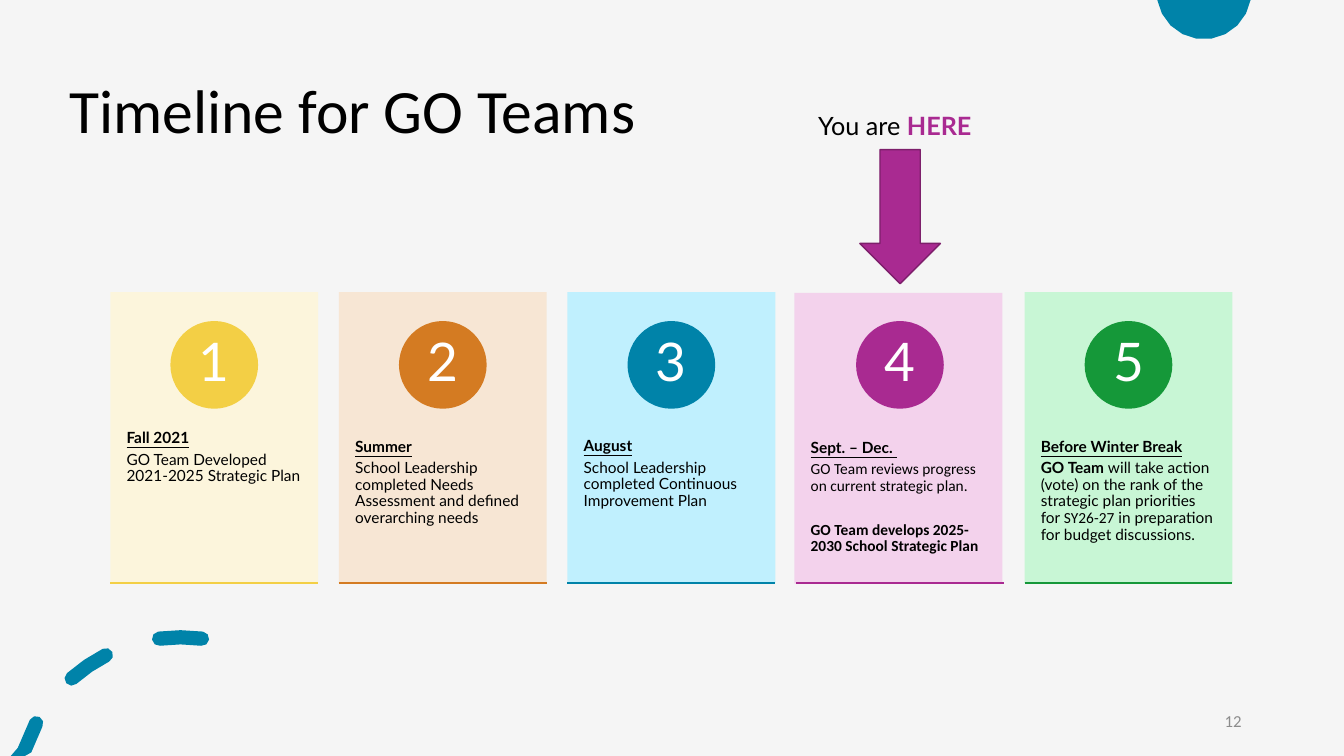
from math import cos, radians, sin

from lxml.etree import SubElement
from pptx import Presentation
from pptx.dml.color import RGBColor
from pptx.enum.shapes import MSO_CONNECTOR, MSO_SHAPE
from pptx.enum.text import MSO_ANCHOR, PP_ALIGN
from pptx.oxml.ns import qn
from pptx.util import Cm, Pt

THEME = {
    "back": "F5F5F5", "ink": "000000", "white": "FFFFFF", "grey": "8C8C8C",
    "teal": "0083A9", "plum": "A92A91", "plum_edge": "7D1F6B",
    "title": 44, "number": 38, "label": 18, "page": 12, "body": 11,
    "head_font": "Calibri", "body_font": "Lato",
}
LATO, CALIBRI = THEME["body_font"], THEME["head_font"]


def add_run(p, text, size, color, font=LATO, bold=False, underline=False):
    r = p.add_run()
    r.text = text
    r.font.name, r.font.size = font, Pt(THEME[size])
    r.font.bold, r.font.underline = bold, underline
    r.font.color.rgb = RGBColor.from_string(THEME[color])


def paint(sp, fill, line=None):
    sp.shadow.inherit = False
    sp.fill.solid()
    sp.fill.fore_color.rgb = RGBColor.from_string(fill)
    if line:
        sp.line.color.rgb = RGBColor.from_string(line)
        sp.line.width = Pt(1)
    else:
        sp.line.fill.background()


prs = Presentation()
prs.slide_width, prs.slide_height = Cm(33.87), Cm(19.05)
s = prs.slides.add_slide(prs.slide_layouts[5])
s.background.fill.solid()
s.background.fill.fore_color.rgb = RGBColor.from_string(THEME["back"])

# Corner decorations: a cut disc and three round-ended dashes on one ring
disc = [(30.34 - 1.19 * sin(radians(t)), max(0, -0.2 - 1.19 * cos(radians(t))))
        for t in range(99, 262, 18)]
dashes = []
ring_x, ring_y, ring_r, half = 4.55, 20.2, 4.14, 0.18
for start, end in ((61.5, 82), (27, 41.5), (-7.5, 7.5)):
    middle = (start + end) / 2
    sweep = [(t, t) for t in (start, middle, end)]
    sweep += [(end, end + turn) for turn in (45, 90, 135)]
    sweep += [(t, t + 180) for t in (end, middle, start)]
    sweep += [(start, start + turn) for turn in (225, 270, 315)]
    dashes.append([
        (ring_x - ring_r * sin(radians(t)) - half * sin(radians(a)),
         min(19.05, ring_y - ring_r * cos(radians(t)) - half * cos(radians(a))))
        for t, a in sweep])
for outlines in ([disc], dashes):
    contours = [[(Cm(x), Cm(y)) for x, y in outline] for outline in outlines]
    builder = s.shapes.build_freeform(*contours[0][0])
    for contour in contours:
        if contour is not contours[0]:
            builder.move_to(*contour[0])
        builder.add_line_segments(contour[1:], close=True)
    paint(builder.convert_to_shape(), THEME["teal"])

# Title
title = s.shapes.title
title.left, title.top, title.width, title.height = Cm(1.5), Cm(1.02), Cm(29.21), Cm(3.68)
tf = title.text_frame
tf.vertical_anchor = MSO_ANCHOR.MIDDLE
p = tf.paragraphs[0]
p.alignment, p.line_spacing = PP_ALIGN.LEFT, 0.9
add_run(p, "Timeline for GO Teams", "title", "ink", CALIBRI)

# Timeline cards: accent, tint, nudge, heading, paragraphs of (text, font, bold)
cards = [
    ("F3CF45", "FDF5DA", (0, 0), "Fall 2021",
     [[("GO Team Developed 2021-2025 Strategic Plan", LATO, False)]]),
    ("D47B22", "F8E5D1", (0, 0), "Summer",
     [[("School Leadership completed Needs Assessment and defined overarching needs",
        LATO, False)]]),
    (THEME["teal"], "BBF0FF", (0, 0), "August",
     [[("School Leadership completed Continuous Improvement Plan", LATO, False)]]),
    (THEME["plum"], "F3CFEC", (-0.04, 0.02), "Sept. – Dec. ",
     [[("GO Team reviews progress on current strategic plan.", CALIBRI, False)],
      [("GO Team develops 2025-2030 School Strategic Plan", CALIBRI, True)]]),
    ("159839", "C4F7D2", (0, 0), "Before Winter Break",
     [[("GO Team ", LATO, True),
       ("will take action (vote) on the rank of the strategic plan priorities for ", LATO, False),
       ("SY26-27", CALIBRI, False),
       (" in preparation for budget discussions.", LATO, False)]]),
]
card_left, card_top, card_w, card_h, pitch = 2.78, 7.36, 5.24, 7.33, 5.76
badge, number = 2.21, 1.55
for i, (accent, tint, (dx, dy), heading, paragraphs) in enumerate(cards):
    x = card_left + i * pitch
    center = x + card_w / 2

    # Panel
    sp = s.shapes.add_shape(MSO_SHAPE.RECTANGLE, Cm(x + dx), Cm(card_top + dy),
                            Cm(card_w), Cm(card_h))
    paint(sp, tint)
    color = sp.fill._xPr.find(qn("a:solidFill"))[0]
    SubElement(color, qn("a:alpha"), val="90000")

    # Heading and text
    tf = s.shapes.add_textbox(Cm(x + dx), Cm(10.15 + dy), Cm(card_w), Cm(4.39)).text_frame
    tf.word_wrap = True
    tf.margin_left = tf.margin_right = Cm(0.41)
    tf.margin_top = tf.margin_bottom = Cm(0.91)
    add_run(tf.paragraphs[0], heading, "body", "ink", bold=True, underline=True)
    for n, runs in enumerate(paragraphs):
        p = tf.add_paragraph()
        p.space_before = Pt(16 if n else 0)
        for text, font, bold in runs:
            add_run(p, text, "body", "ink", font, bold)
    for p in tf.paragraphs:
        p.line_spacing, p.space_after = 0.9, Pt(3.5)

    # Numbered badge
    sp = s.shapes.add_shape(MSO_SHAPE.OVAL, Cm(center - badge / 2), Cm(8.09),
                            Cm(badge), Cm(badge))
    paint(sp, accent)
    tf = s.shapes.add_textbox(Cm(center - number / 2), Cm(8.41),
                              Cm(number), Cm(number)).text_frame
    tf.word_wrap, tf.vertical_anchor = True, MSO_ANCHOR.MIDDLE
    tf.margin_left = tf.margin_right = Cm(0.18)
    tf.margin_top = tf.margin_bottom = Cm(0.03)
    p = tf.paragraphs[0]
    p.alignment, p.line_spacing = PP_ALIGN.CENTER, 0.9
    add_run(p, str(i + 1), "number", "white")

    # Base line
    base = s.shapes.add_connector(MSO_CONNECTOR.STRAIGHT, Cm(x), Cm(14.69),
                                  Cm(x + card_w), Cm(14.69))
    base.line.color.rgb = RGBColor.from_string(accent)
    base.line.width = Pt(1)
    SubElement(base._element.spPr, qn("a:effectLst"))

# "You are here" marker
arrow = s.shapes.add_shape(MSO_SHAPE.DOWN_ARROW, Cm(21.67), Cm(3.77), Cm(2.03), Cm(3.38))
paint(arrow, THEME["plum"], THEME["plum_edge"])
tf = s.shapes.add_textbox(Cm(20.37), Cm(2.66), Cm(4.62), Cm(1.02)).text_frame
tf.word_wrap = True
add_run(tf.paragraphs[0], "You are ", "label", "ink")
add_run(tf.paragraphs[0], "HERE", "label", "plum", bold=True)

# Page number
tf = s.shapes.add_textbox(Cm(23.92), Cm(17.65), Cm(7.62), Cm(1.02)).text_frame
tf.word_wrap, tf.vertical_anchor = True, MSO_ANCHOR.MIDDLE
tf.paragraphs[0].alignment = PP_ALIGN.RIGHT
add_run(tf.paragraphs[0], "12", "page", "grey", CALIBRI)

prs.save("out.pptx")
